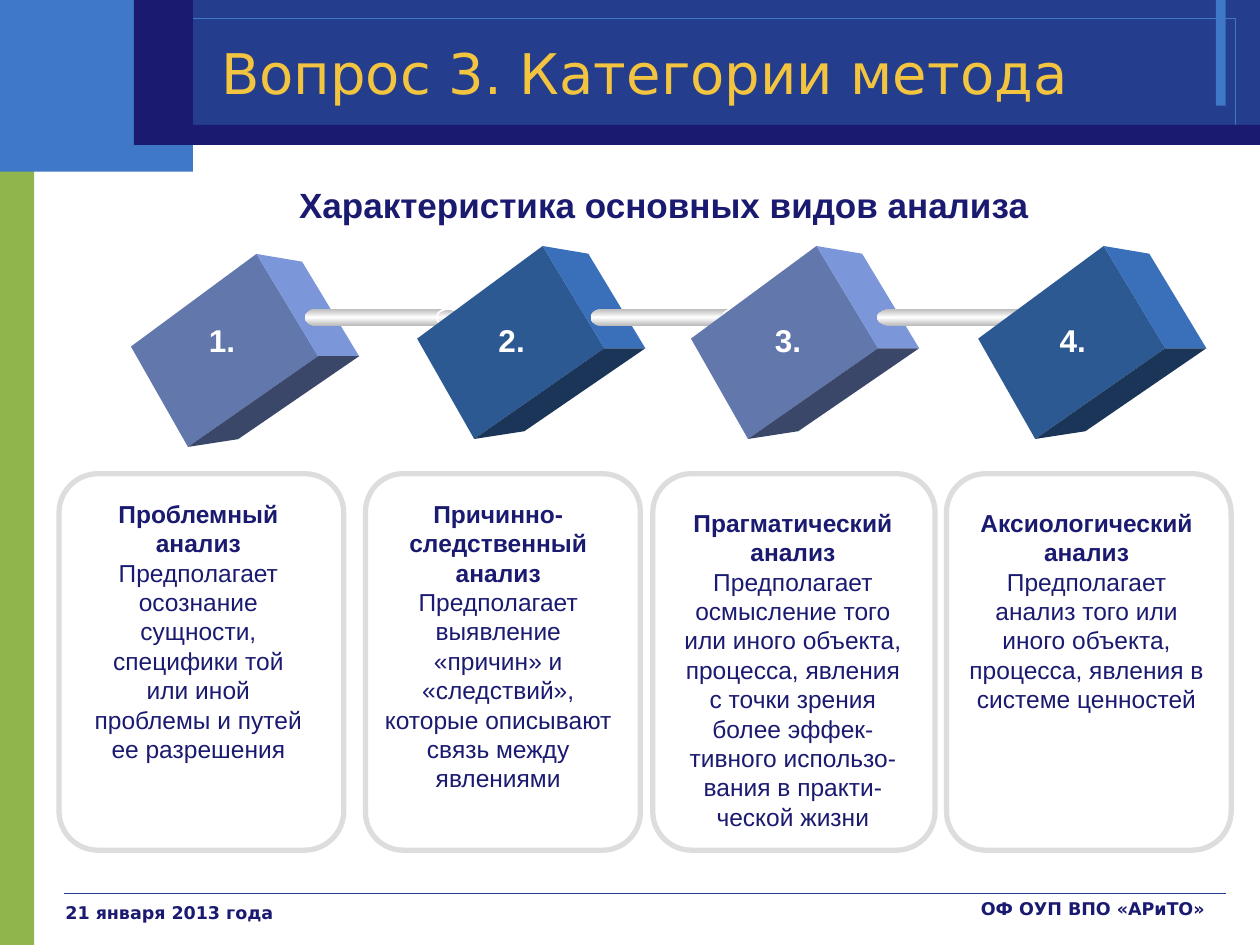
import copy
from dataclasses import dataclass

import pptx
import pptx.dml.color
import pptx.enum.shapes
import pptx.enum.text
import pptx.oxml
import pptx.oxml.ns
import pptx.util

Cm = pptx.util.Cm
Pt = pptx.util.Pt
SHAPE = pptx.enum.shapes.MSO_SHAPE
ALIGN = pptx.enum.text.PP_ALIGN


@dataclass(frozen=True)
class Theme:
    green: str = "90B54D"
    sky: str = "3E78C6"
    blue: str = "243D8C"
    navy: str = "1A1A70"
    gold: str = "F3C43F"
    white: str = "FFFFFF"
    card_line: str = "DDDDDD"
    metal: tuple = ("B6B6B6", "FFFFFF", "B6B6B6")
    light_cube: tuple = ("6277AB", "7B96D9", "3A4768")
    dark_cube: tuple = ("2D5992", "3A6FB9", "1A3558")
    heading_font: str = "DejaVu Sans"
    body_font: str = "Arial"
    title_size: int = 32
    subtitle_size: int = 20
    number_size: int = 18
    card_size: int = 14
    footer_size: int = 10


THEME = Theme()


@dataclass(frozen=True)
class Box:
    left: float
    top: float
    width: float
    height: float

    def fraction(self, x, y, width, height):
        return Box(self.left + x * self.width, self.top + y * self.height,
                   width * self.width, height * self.height)

    def inset(self, x, y, width, height):
        return Box(self.left + x, self.top + y, width, height)

    def lengths(self):
        return Cm(self.left), Cm(self.top), Cm(self.width), Cm(self.height)


CUBE_FACES = (
    ((0, .48), (.55, 0), (.82, .53), (.25, 1)),
    ((.55, 0), (.75, .04), (1, .53), (.82, .53)),
    ((.82, .53), (1, .53), (.47, .96), (.25, 1)),
)
CARDS = (
    (Box(1.19, 9.55, 5.74, 7.59), Box(1.6, 9.93, 4.8, 6.25), ("Проблемный", "анализ"),
     "Предполагает осознание сущности, специфики той или иной проблемы и путей ее разрешения"),
    (Box(7.37, 9.55, 5.54, 7.59), Box(7.39, 9.93, 5.31, 6.25),
     ("Причинно-", "следственный", "анализ"),
     "Предполагает выявление «причин» и «следствий», которые описывают связь между явлениями"),
    (Box(13.16, 9.55, 5.69, 7.59), Box(13.46, 10.11, 5.05, 6.83),
     ("Прагматический", "анализ"),
     "Предполагает осмысление того или иного объекта, процесса, явления с точки зрения "
     "более эффек-тивного использо-вания в практи-ческой жизни"),
    (Box(19.08, 9.55, 5.74, 7.59), Box(19.25, 10.11, 5.31, 5.21),
     ("Аксиологический", "анализ"),
     "Предполагает анализ того или иного объекта, процесса, явления в системе ценностей"),
)
CUBES = (
    (Box(2.64, 5.12, 4.6, 3.89), 1.32, THEME.light_cube),
    (Box(8.41, 4.96, 4.6, 3.89), 1.39, THEME.dark_cube),
    (Box(13.93, 4.96, 4.6, 3.89), 1.44, THEME.light_cube),
    (Box(19.72, 4.96, 4.6, 3.89), 1.39, THEME.dark_cube),
)
RODS = (Box(6.15, 6.22, 3.12, .36), Box(11.91, 6.22, 3.12, .36), Box(17.68, 6.22, 4.09, .36))


def rgb(value):
    return pptx.dml.color.RGBColor.from_string(value)


def paint(shape, fill=None, line=None, line_width=.25):
    shape.shadow.inherit = False
    if fill:
        shape.fill.solid()
        shape.fill.fore_color.rgb = rgb(fill)
    else:
        shape.fill.background()
    if line:
        shape.line.color.rgb = rgb(line)
        shape.line.width = Pt(line_width)
    else:
        shape.line.fill.background()


def add_block(slide, kind, box, fill=None, line=None, line_width=.25):
    block = slide.shapes.add_shape(kind, *box.lengths())
    paint(block, fill, line, line_width)
    return block


def style(paragraph, font, size, color, bold, align):
    paragraph.alignment = align
    paragraph.font.name = font
    paragraph.font.size = Pt(size)
    paragraph.font.bold = bold
    paragraph.font.color.rgb = rgb(color)


def add_text(slide, box, lines, size, font=THEME.body_font, color=THEME.navy,
             align=ALIGN.CENTER):
    frame = slide.shapes.add_textbox(*box.lengths()).text_frame
    frame.word_wrap = True
    frame.text = "\n".join(lines)
    for paragraph in frame.paragraphs:
        style(paragraph, font, size, color, True, align)
    return frame


def add_header(slide, box):
    add_block(slide, SHAPE.RECTANGLE, box.inset(0, 0, 3.89, 3.46), THEME.sky)
    add_block(slide, SHAPE.RECTANGLE, box.inset(3.89, 0, 21.51, 2.92), THEME.blue)
    add_block(slide, SHAPE.RECTANGLE, box.inset(24.51, 0, .2, 2.13), THEME.sky)
    add_block(slide, SHAPE.RECTANGLE, box.inset(.51, .37, 24.4, 2.16), line=THEME.sky)
    add_block(slide, SHAPE.RECTANGLE, box.inset(3.3, 2.52, 22.1, .4), THEME.navy)
    add_block(slide, SHAPE.RECTANGLE, box.inset(2.7, 0, 1.19, 2.92), THEME.navy)
    title = slide.shapes.title
    slide.shapes._spTree.append(title._element)
    title.left, title.top, title.width, title.height = box.inset(2.08, .66, 21.84, 1.57).lengths()
    title.text_frame.text = "Вопрос 3. Категории метода"
    title.text_frame.vertical_anchor = pptx.enum.text.MSO_ANCHOR.MIDDLE
    style(title.text_frame.paragraphs[0], THEME.heading_font, THEME.title_size,
          THEME.gold, False, ALIGN.CENTER)


def add_footer(slide, box):
    rule = slide.shapes.add_connector(
        pptx.enum.shapes.MSO_CONNECTOR.STRAIGHT,
        Cm(box.left), Cm(box.top), Cm(box.left + box.width), Cm(box.top))
    rule.line.color.rgb = rgb(THEME.blue)
    rule.line.width = Pt(.25)
    rule._element.spPr.append(pptx.oxml.parse_xml(
        f'<a:effectLst {pptx.oxml.ns.nsdecls("a")}/>'))
    add_text(slide, box.inset(-.23, .05, 6.99, .64), ["21 января 2013 года"],
             THEME.footer_size, THEME.heading_font, align=ALIGN.LEFT)
    add_text(slide, box.inset(17.34, -.03, 5.89, .66), ["ОФ ОУП ВПО «АРиТО»"],
             THEME.footer_size, THEME.heading_font, align=ALIGN.RIGHT)


def add_card(slide, box, text_box, heading, description):
    card = add_block(slide, SHAPE.ROUNDED_RECTANGLE, box, line=THEME.card_line, line_width=3)
    card.adjustments[0] = .137
    frame = add_text(slide, text_box, [*heading, description], THEME.card_size)
    frame.paragraphs[-1].font.bold = False


def add_cube(slide, box, number_offset, number, colors):
    for corners, color in zip(CUBE_FACES, colors):
        points = [(Cm(box.left + x * box.width), Cm(box.top + y * box.height))
                  for x, y in corners]
        outline = slide.shapes.build_freeform(*points[0])
        outline.add_line_segments(points[1:])
        paint(outline.convert_to_shape(), color)
    add_text(slide, Box(box.left + number_offset, 6.35, 1.3, 1.02), [f"{number}."],
             THEME.number_size, color=THEME.white, align=ALIGN.LEFT)


def add_metal(shape):
    shape.fill.gradient()
    shape.fill.gradient_angle = 90
    stop_list = shape.fill.gradient_stops[0]._gs.getparent()
    stop_list.append(copy.deepcopy(stop_list[-1]))
    for stop, position, color in zip(shape.fill.gradient_stops, (0, .5, 1), THEME.metal):
        stop.position = position
        stop.color.rgb = rgb(color)


def add_rod(slide, box):
    add_metal(add_block(slide, SHAPE.OVAL, box.fraction(0, 0, .17, 1)))
    add_metal(add_block(slide, SHAPE.RECTANGLE, box.fraction(.1, 0, .83, 1)))
    add_metal(add_block(slide, SHAPE.OVAL, box.fraction(.85, .03, .15, .94),
                        line=THEME.white, line_width=1))
    add_metal(add_block(slide, SHAPE.OVAL, box.fraction(.93, .36, .04, .28)))


def add_chain(slide):
    for index, (box, number_offset, colors) in enumerate(CUBES):
        add_cube(slide, box, number_offset, index + 1, colors)
        if index < len(RODS):
            add_rod(slide, RODS[index])


def main():
    deck = pptx.Presentation()
    deck.slide_width, deck.slide_height = Cm(25.4), Cm(19.05)
    slide = deck.slides.add_slide(deck.slide_layouts[5])
    add_block(slide, SHAPE.RECTANGLE, Box(0, 2.72, .69, 16.33), THEME.green)
    add_header(slide, Box(0, 0, 25.4, 3.46))
    add_footer(slide, Box(1.3, 18.01, 23.42, 1.04))
    add_text(slide, Box(3.76, 3.58, 19.25, 1.12),
             ["Характеристика основных видов анализа"], THEME.subtitle_size)
    add_chain(slide)
    for card in CARDS:
        add_card(slide, *card)
    deck.save("out.pptx")


if __name__ == "__main__":
    main()
